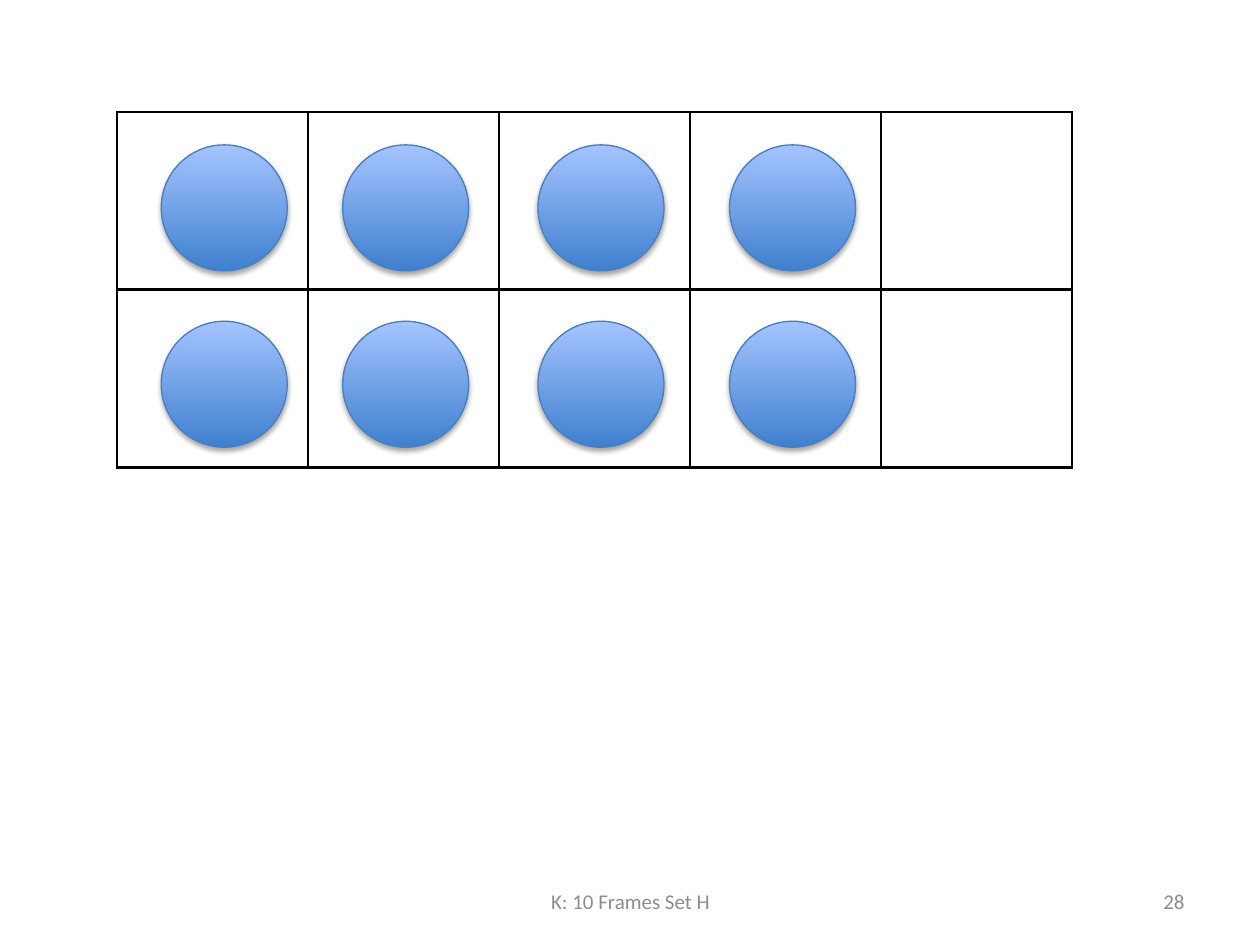
from lxml.etree import SubElement
from pptx import Presentation
from pptx.dml.color import RGBColor
from pptx.enum.shapes import MSO_SHAPE
from pptx.enum.text import MSO_ANCHOR, PP_ALIGN
from pptx.oxml import parse_xml
from pptx.oxml.ns import nsdecls, qn
from pptx.util import Inches, Pt

COLORS = {"paper": "FFFFFF", "grid": "000000", "gray": "8C8C8C",
          "deep": "3F80CE", "light": "A4C4FF", "edge": "4B7EBC"}
FRAME = {"left": 0.93, "top": 0.89, "col": 1.516, "row": 1.41}
ROWS, COLS = 2, 5
DOT_X = [1.28, 2.72, 4.27, 5.79]
DOT_Y = [1.15, 2.55]
DOT = 1
# widths in points: left, right, top, bottom for each row
BORDERS = [{"lnL": 1, "lnR": 1, "lnT": 1, "lnB": 2},
           {"lnL": 1, "lnR": 1, "lnT": 2, "lnB": 1.5}]
FOOTER = [("K: 10 Frames Set H", 3.42, 3.17, PP_ALIGN.CENTER),
          ("28", 7.17, 2.33, PP_ALIGN.RIGHT)]
FOOT_Y, FOOT_H = 6.95, 0.4
FONT = {"name": "Calibri", "size": Pt(12)}


def color(name):
    return RGBColor.from_string(COLORS[name])


def set_borders(cell, widths):
    props = cell._tc.get_or_add_tcPr()
    for i, (side, width) in enumerate(widths.items()):
        line = parse_xml(
            f'<a:{side} {nsdecls("a")} w="{Pt(width)}"><a:solidFill>'
            f'<a:srgbClr val="{COLORS["grid"]}"/></a:solidFill></a:{side}>')
        props.insert(i, line)


def add_frame(slide):
    table = slide.shapes.add_table(
        ROWS, COLS, Inches(FRAME["left"]), Inches(FRAME["top"]),
        Inches(FRAME["col"] * COLS), Inches(FRAME["row"] * ROWS)).table
    table.first_row = table.horz_banding = False
    for row, widths in zip(table.rows, BORDERS):
        for cell in row.cells:
            cell.fill.solid()
            cell.fill.fore_color.rgb = color("paper")
            set_borders(cell, widths)


def add_shadow(shape):
    shape.shadow.inherit = False
    effects = shape._element.spPr.find(qn("a:effectLst"))
    outer = SubElement(effects, qn("a:outerShdw"), blurRad=str(Pt(3.1)),
                       dist=str(Pt(1.8)), dir="5400000", rotWithShape="0")
    tone = SubElement(outer, qn("a:srgbClr"), val=COLORS["grid"])
    SubElement(tone, qn("a:alpha"), val="35000")


def add_dot(slide, x, y):
    dot = slide.shapes.add_shape(MSO_SHAPE.OVAL, Inches(x), Inches(y),
                                 Inches(DOT), Inches(DOT))
    dot.fill.gradient()
    dot.fill.gradient_angle = 90
    for stop, name in zip(dot.fill.gradient_stops, ("deep", "light")):
        stop.color.rgb = color(name)
    dot.line.color.rgb = color("edge")
    dot.line.width = Pt(0.75)
    add_shadow(dot)


def add_label(slide, text, x, width, align):
    frame = slide.shapes.add_textbox(Inches(x), Inches(FOOT_Y), Inches(width),
                                     Inches(FOOT_H)).text_frame
    frame.word_wrap = True
    frame.vertical_anchor = MSO_ANCHOR.MIDDLE
    para = frame.paragraphs[0]
    para.alignment = align
    run = para.add_run()
    run.text = text
    for key, value in FONT.items():
        setattr(run.font, key, value)
    run.font.color.rgb = color("gray")


def main():
    deck = Presentation()
    deck.slide_width, deck.slide_height = Inches(10), Inches(7.5)
    slide = deck.slides.add_slide(deck.slide_layouts[6])
    add_frame(slide)
    for label in FOOTER:
        add_label(slide, *label)
    for y in DOT_Y:
        for x in DOT_X:
            add_dot(slide, x, y)
    deck.save("out.pptx")


if __name__ == "__main__":
    main()
